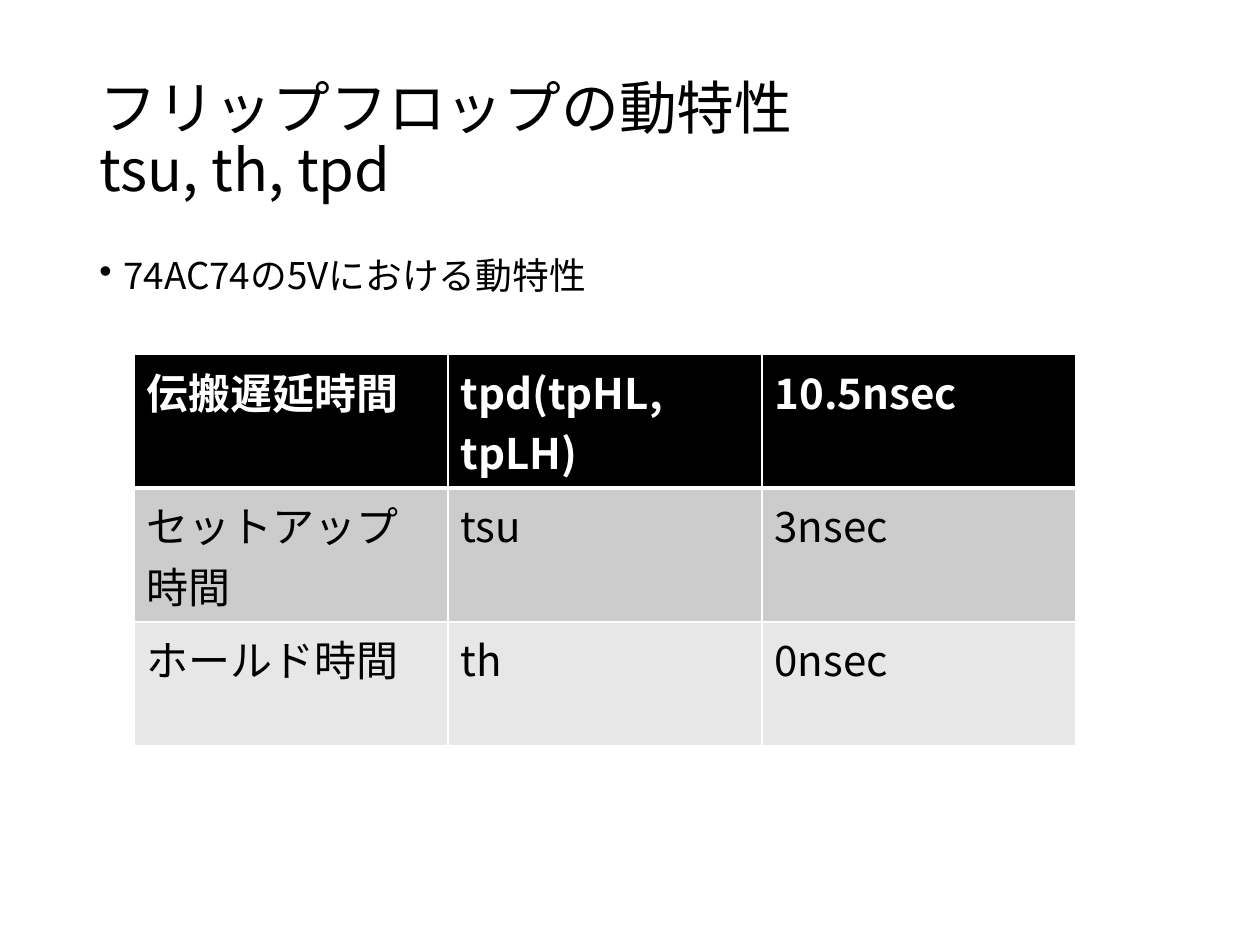
from pptx import Presentation
from pptx.dml.color import RGBColor
from pptx.enum.text import MSO_ANCHOR
from pptx.oxml.ns import qn
from pptx.util import Pt
from lxml.etree import SubElement, Element

PX = 914400 // 126
FONT = "Noto Sans CJK JP"
BLACK, WHITE = "000000", "FFFFFF"
ROWS = [
    ("伝搬遅延時間", "tpd(tpHL, tpLH)", "10.5nsec"),
    ("セットアップ時間", "tsu", "3nsec"),
    ("ホールド時間", "th", "0nsec"),
]
ROW_FILLS = [BLACK, "CCCCCC", "E7E7E7"]
ROW_HEIGHTS = [134, 134, 124]  # the first two rows hold wrapped text


def px(*lengths):
    return [length * PX for length in lengths]


def color(hex_code):
    return RGBColor.from_string(hex_code)


def style(paragraph, size, hex_code=BLACK, bold=False):
    """Set the font for both Latin and Japanese text."""
    font = paragraph.font
    font.size, font.bold, font.name = Pt(size), bold, FONT
    font.color.rgb = color(hex_code)
    defaults = paragraph._p.pPr.find(qn("a:defRPr"))
    SubElement(defaults, qn("a:ea"), typeface=FONT)


def add_text(slide, box, text, size, anchor=MSO_ANCHOR.TOP):
    frame = slide.shapes.add_textbox(*px(*box)).text_frame
    frame.word_wrap = True
    frame.vertical_anchor = anchor
    paragraph = frame.paragraphs[0]
    paragraph.text = text
    paragraph.line_spacing = 0.9
    style(paragraph, size)
    return paragraph


def add_bullet(paragraph, indent):
    properties = paragraph._p.pPr
    properties.set("marL", str(indent * PX))
    properties.set("indent", str(-indent * PX))
    bullet = Element(qn("a:buChar"), char="•")
    properties.find(qn("a:defRPr")).addprevious(bullet)


def set_borders(cell, top, bottom):
    """Draw white cell borders; top and bottom are widths in points."""
    widths = {"L": 1, "R": 1, "T": top, "B": bottom}
    properties = cell._tc.get_or_add_tcPr()
    for position, (side, width) in enumerate(widths.items()):
        line = Element(qn(f"a:ln{side}"), w=str(Pt(width)))
        fill = SubElement(line, qn("a:solidFill"))
        SubElement(fill, qn("a:srgbClr"), val=WHITE)
        properties.insert(position, line)


def add_timing_table(slide, left, top, column_width):
    count = len(ROWS[0])
    table = slide.shapes.add_table(
        len(ROWS), count,
        *px(left, top, column_width * count, sum(ROW_HEIGHTS))).table
    table.horz_banding = False
    for column in table.columns:
        column.width = column_width * PX
    for r, (texts, row_fill, height) in enumerate(
            zip(ROWS, ROW_FILLS, ROW_HEIGHTS)):
        header = r == 0
        table.rows[r].height = height * PX
        for c, text in enumerate(texts):
            cell = table.cell(r, c)
            cell.text = text
            style(cell.text_frame.paragraphs[0], 24,
                  WHITE if header else BLACK, bold=header)
            cell.fill.solid()
            cell.fill.fore_color.rgb = color(row_fill)
            set_borders(cell, top=3 if r == 1 else 1, bottom=3 if header else 1)


def main():
    presentation = Presentation()
    presentation.slide_width, presentation.slide_height = px(1260, 945)
    slide = presentation.slides.add_slide(presentation.slide_layouts[6])
    add_text(slide, (87, 50, 1086, 183),
             "フリップフロップの動特性\vtsu, th, tpd", 33, MSO_ANCHOR.MIDDLE)
    summary = add_text(slide, (87, 252, 1086, 600),
                       "74AC74の5Vにおける動特性", 21)
    summary.space_before = Pt(7.5)
    add_bullet(summary, 24)
    add_timing_table(slide, left=134, top=354, column_width=314)
    presentation.save("out.pptx")


if __name__ == "__main__":
    main()
